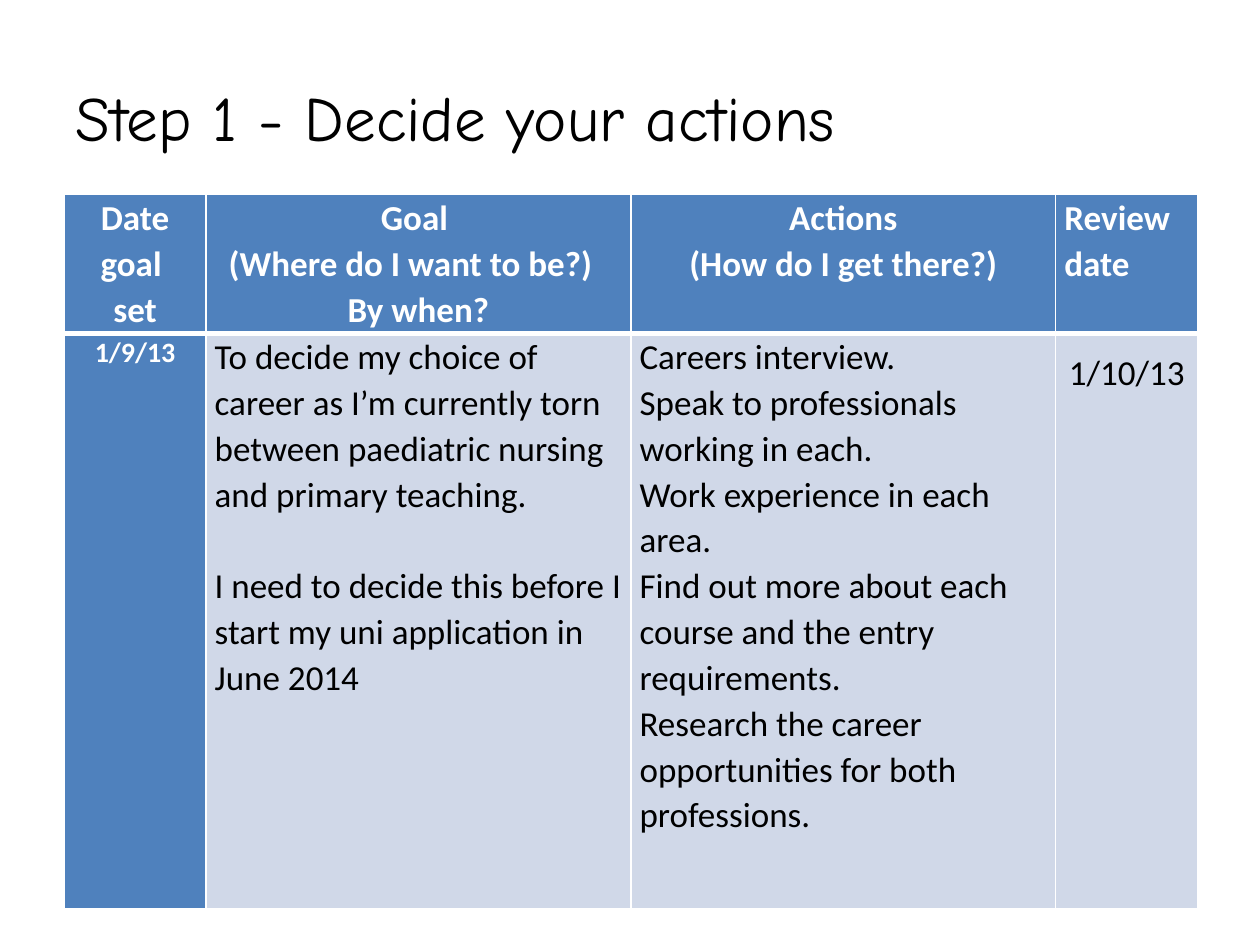
import pptx
import pptx.dml.color
import pptx.enum.text
import pptx.oxml
import pptx.oxml.ns
import pptx.util

Pt = pptx.util.Pt
ALIGN = pptx.enum.text.PP_ALIGN
WHITE, BLACK, BLUE, PALE = "FFFFFF", "000000", "4F81BD", "D0D8E8"
COLUMNS = [81, 242.8, 242.8, 81.4]
ROWS = [79.2, 329]
HEADERS = [
    ["Date goal ", "set"],
    ["Goal ", "(Where do I want to be?)  ", "By when?"],
    ["Actions", "(How do I get there?)"],
    ["Review date"],
]
DETAILS = [
    ["1/9/13"],
    [
        "To decide my choice of career as I’m currently torn between paediatric nursing and primary teaching.",
        "I need to decide this before I start my uni application in June 2014",
    ],
    [
        "Careers interview.",
        "Speak to professionals working in each.",
        "Work experience in each area.",
        "Find out more about each course and the entry requirements.",
        "Research the career opportunities for both professions.",
    ],
    ["1/10/13"],
]


def rgb(value):
    """Turn a hex string into a colour."""
    return pptx.dml.color.RGBColor.from_string(value)


def apply(obj, **values):
    """Set each named attribute on an object."""
    for name, value in values.items():
        setattr(obj, name, value)


def set_borders(cell, **widths):
    """Draw white cell borders with the given widths in points."""
    tcPr = cell._tc.get_or_add_tcPr()
    for i, (side, width) in enumerate(widths.items()):
        tcPr.insert(i, pptx.oxml.parse_xml(
            f'<a:{side} {pptx.oxml.ns.nsdecls("a")} w="{Pt(width)}"><a:solidFill>'
            f'<a:srgbClr val="{WHITE}"/></a:solidFill></a:{side}>'))


def fill_cell(cell, lines, fill, color, size=20, bold=False, align=ALIGN.LEFT, top=0, gap=0):
    """Write the lines of one cell and format it."""
    apply(cell, margin_left=Pt(5), margin_right=Pt(5), margin_top=Pt(top), margin_bottom=0)
    cell.fill.solid()
    cell.fill.fore_color.rgb = rgb(fill)
    tf = cell.text_frame
    for i, line in enumerate(lines):
        p = tf.add_paragraph() if i else tf.paragraphs[0]
        apply(p, alignment=align, line_spacing=1.07, space_before=Pt(gap if i else 0))
        r = p.add_run()
        r.text = line
        apply(r.font, name="Calibri", size=Pt(size), bold=bold)
        r.font.color.rgb = rgb(color)


def add_title(s, text, x, y, w, h):
    """Place the title placeholder in its box."""
    sp = s.shapes.title
    apply(sp, left=Pt(x), top=Pt(y), width=Pt(w), height=Pt(h))
    tf = sp.text_frame
    tf.vertical_anchor = pptx.enum.text.MSO_ANCHOR.MIDDLE
    p = tf.paragraphs[0]
    p.alignment = ALIGN.LEFT
    r = p.add_run()
    r.text = text
    apply(r.font, name="Comic Neue", size=Pt(36))
    r.font.color.rgb = rgb(BLACK)


def add_action_table(s, x, y):
    """Place the goal and action table at its top left corner."""
    table = s.shapes.add_table(
        len(ROWS), len(COLUMNS), Pt(x), Pt(y), Pt(sum(COLUMNS)), Pt(sum(ROWS))).table
    for column, width in zip(table.columns, COLUMNS):
        column.width = Pt(width)
    for row, height in zip(table.rows, ROWS):
        row.height = Pt(height)
    header = dict(fill=BLUE, color=WHITE, bold=True)
    body = dict(fill=PALE, color=BLACK)
    centred = dict(align=ALIGN.CENTER)
    formats = [
        [header | centred, header | centred, header | centred, header],
        [header | centred | dict(size=16), body | dict(gap=26), body, body | centred | dict(top=9)],
    ]
    borders = [dict(lnL=1, lnR=1, lnT=1, lnB=3), dict(lnL=1, lnR=1, lnT=3, lnB=1)]
    for i, texts in enumerate([HEADERS, DETAILS]):
        for j, lines in enumerate(texts):
            cell = table.cell(i, j)
            fill_cell(cell, lines, **formats[i][j])
            set_borders(cell, **borders[i])


def main():
    """Build and save the slide."""
    prs = pptx.Presentation()
    apply(prs, slide_width=Pt(720), slide_height=Pt(540))
    s = prs.slides.add_slide(prs.slide_layouts[5])
    add_title(s, "Step 1 - Decide your actions", 36, 21.6, 648, 90)
    add_action_table(s, 36.7, 111.2)
    prs.save("out.pptx")


if __name__ == "__main__":
    main()
